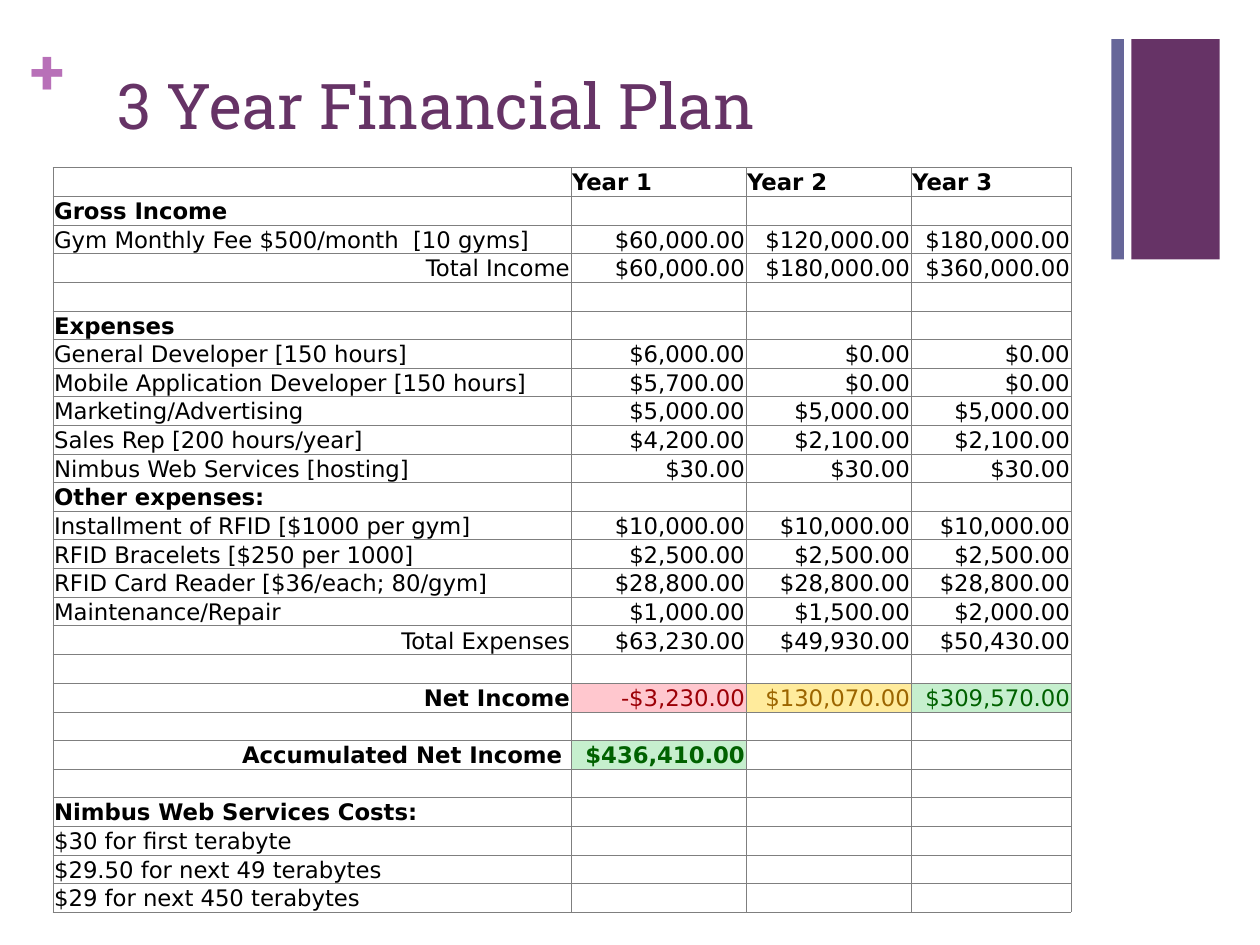
from lxml.etree import SubElement as Sub
from pptx import Presentation
from pptx.dml.color import RGBColor as Rgb
from pptx.enum.shapes import MSO_SHAPE as Shape
from pptx.enum.text import MSO_ANCHOR as Anchor, MSO_AUTO_SIZE as Auto, PP_ALIGN as Align
from pptx.oxml.ns import qn
from pptx.util import Inches, Pt

HEX = {"plum": "663366", "slate": "666699", "pink": "B870B8", "ink": "000000",
       "grid": "7F7F7F", "red": "9C0006", "rose": "FFC7CE", "amber": "9C6500",
       "sand": "FFEB9C", "green": "006100", "mint": "C6EFCE"}
HEAD, BODY = "Roboto Slab", "DejaVu Sans"

TITLE = "3 Year Financial Plan"
# Row style (head, item, total or sum), then the texts from the left
ROWS = [
    ("head", "", "Year 1", "Year 2", "Year 3"),
    ("head", "Gross Income"),
    ("item", "Gym Monthly Fee $500/month  [10 gyms]", "$60,000.00", "$120,000.00", "$180,000.00"),
    ("total", "Total Income", "$60,000.00", "$180,000.00", "$360,000.00"),
    ("item",),
    ("head", "Expenses"),
    ("item", "General Developer [150 hours]", "$6,000.00", "$0.00", "$0.00"),
    ("item", "Mobile Application Developer [150 hours]", "$5,700.00", "$0.00", "$0.00"),
    ("item", "Marketing/Advertising", "$5,000.00", "$5,000.00", "$5,000.00"),
    ("item", "Sales Rep [200 hours/year]", "$4,200.00", "$2,100.00", "$2,100.00"),
    ("item", "Nimbus Web Services [hosting]", "$30.00", "$30.00", "$30.00"),
    ("head", "Other expenses:"),
    ("item", "Installment of RFID [$1000 per gym]", "$10,000.00", "$10,000.00", "$10,000.00"),
    ("item", "RFID Bracelets [$250 per 1000]", "$2,500.00", "$2,500.00", "$2,500.00"),
    ("item", "RFID Card Reader [$36/each; 80/gym]", "$28,800.00", "$28,800.00", "$28,800.00"),
    ("item", "Maintenance/Repair", "$1,000.00", "$1,500.00", "$2,000.00"),
    ("total", "Total Expenses", "$63,230.00", "$49,930.00", "$50,430.00"),
    ("item",),
    ("sum", "Net Income", "-$3,230.00", "$130,070.00", "$309,570.00"),
    ("item",),
    ("sum", "Accumulated Net Income ", "$436,410.00"),
    ("item",),
    ("head", "Nimbus Web Services Costs:"),
    ("item", "$30 for first terabyte"),
    ("item", "$29.50 for next 49 terabytes"),
    ("item", "$29 for next 450 terabytes"),
]
# Highlighted cells: (row, column) to text colour, fill, bold
MARKS = {(18, 1): ("red", "rose", False), (18, 2): ("amber", "sand", False),
         (18, 3): ("green", "mint", False), (20, 1): ("green", "mint", True)}
COLS = [4.11, 1.39, 1.31, 1.27]
ROW, TALL = 0.21, {16: 0.23}
BARS = [(8.98, 0.7, "plum"), (8.82, 0.1, "slate")]


def put(obj, vals):
    for key, val in vals.items():
        setattr(obj, key, val)


def write(para, text, size, face, tone, bold=False, align=Align.LEFT):
    para.alignment = align
    run = para.add_run()
    run.text = text
    put(run.font, {"size": Pt(size), "name": face, "bold": bold})
    run.font.color.rgb = Rgb.from_string(HEX[tone])


def border(cell):
    props = cell._tc.get_or_add_tcPr()
    for side in "LRTB":
        line = Sub(props, qn("a:ln" + side), w="3175")
        Sub(Sub(line, qn("a:solidFill")), qn("a:srgbClr"), val=HEX["grid"])


def fill_cell(cell, r, c, kind, text):
    put(cell, {"vertical_anchor": Anchor.BOTTOM, "margin_left": Inches(0.01),
               "margin_right": Inches(0.01), "margin_top": Inches(0.01), "margin_bottom": 0})
    border(cell)
    tone, back, bold = MARKS.get((r, c), ("ink", None, kind == "head" or kind == "sum"))
    if back:
        cell.fill.solid()
        cell.fill.fore_color.rgb = Rgb.from_string(HEX[back])
    else:
        cell.fill.background()
    para = cell.text_frame.paragraphs[0]
    if text:
        left = kind == "head" or (kind == "item" and c == 0)
        write(para, text, 13, BODY, tone, bold, Align.LEFT if left else Align.RIGHT)
    else:  # keeps blank rows as low as the others
        end = Sub(para._p, qn("a:endParaRPr"), sz="1300")
        Sub(end, qn("a:latin"), typeface=BODY)


def main():
    prs = Presentation()
    put(prs, {"slide_width": Inches(10), "slide_height": Inches(7.5)})
    slide = prs.slides.add_slide(prs.slide_layouts[5])
    shapes = slide.shapes

    # Title
    title = shapes.title
    put(title, {"left": Inches(0.83), "top": Inches(0.5),
                "width": Inches(6.42), "height": Inches(0.92)})
    put(title.text_frame, {"auto_size": Auto.NONE, "vertical_anchor": Anchor.TOP,
                           "margin_top": Inches(0.03)})
    write(title.text_frame.paragraphs[0], TITLE, 36, HEAD, "plum")

    # Corner bars
    for x, wide, tone in BARS:
        bar = shapes.add_shape(Shape.RECTANGLE, Inches(x), Inches(0.31),
                               Inches(wide), Inches(1.75))
        bar.shadow.inherit = False
        bar.fill.solid()
        bar.fill.fore_color.rgb = Rgb.from_string(HEX[tone])
        bar.line.fill.background()

    # Plus sign
    plus = shapes.add_textbox(Inches(0.24), Inches(0.25), Inches(0.29), Inches(0.61)).text_frame
    put(plus, {"margin_" + side: 0 for side in ("left", "right", "top", "bottom")})
    write(plus.paragraphs[0], "+", 36, HEAD, "pink", True)

    # Plan table
    table = shapes.add_table(len(ROWS), len(COLS), Inches(0.42), Inches(1.33),
                             Inches(sum(COLS)), Inches(ROW * len(ROWS))).table
    put(table, {"first_row": False, "horz_banding": False})
    for col, wide in zip(table.columns, COLS):
        col.width = Inches(wide)
    for r, (kind, *texts) in enumerate(ROWS):
        table.rows[r].height = Inches(TALL.get(r, ROW))
        for c in range(len(COLS)):
            fill_cell(table.cell(r, c), r, c, kind, texts[c] if c < len(texts) else "")

    prs.save("out.pptx")


if __name__ == "__main__":
    main()
